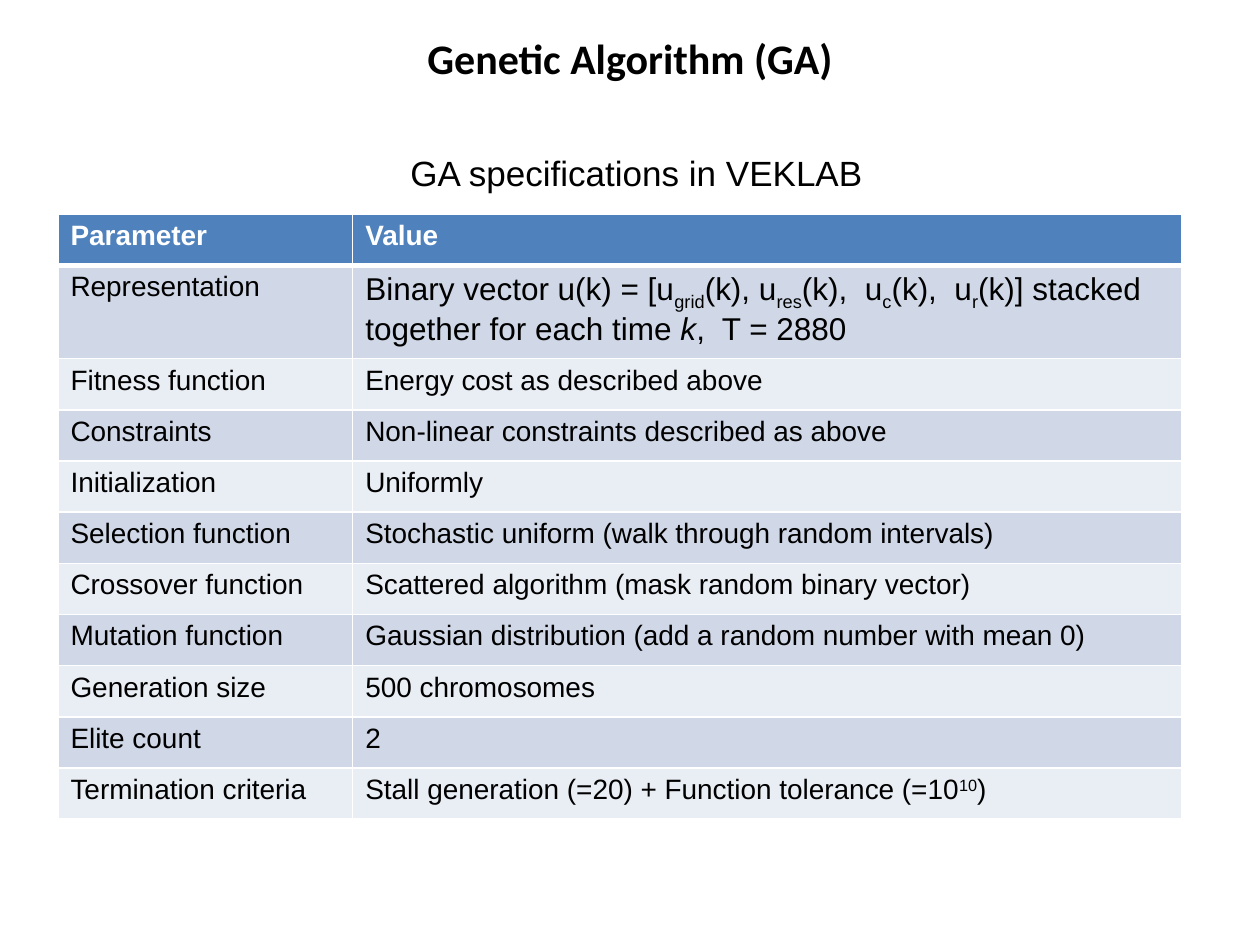
from dataclasses import dataclass

from lxml import etree
from pptx import Presentation
from pptx import util as u
from pptx.dml.color import RGBColor
from pptx.enum import text
from pptx.oxml.ns import qn


@dataclass(frozen=True)
class Theme:
    heading_font: str = "Calibri"
    body_font: str = "Arial"
    ink: str = "000000"
    paper: str = "FFFFFF"
    header: str = "4F81BD"
    bands: tuple = ("D0D8E8", "E9EDF4")
    title_size: int = 24
    caption_size: int = 20
    formula_size: int = 18
    cell_size: int = 16
    grid_line: int = 1
    header_line: int = 3


THEME = Theme()
SUB, SUPER, ITALIC = {"baseline": -25}, {"baseline": 30}, {"italic": True}

COLUMNS = (2.34, 6.58)
TABLE_LEFT, TABLE_TOP, TABLE_HEIGHT = 0.46, 1.7, 4.79
FORMULA_ROW, FORMULA_HEIGHT = 1, 0.73

FORMULA = [
    "Binary vector u(k) = [u", ("grid", SUB), "(k), u", ("res", SUB),
    "(k),  u", ("c", SUB), "(k),  u", ("r", SUB),
    "(k)] stacked together for each time ", ("k", ITALIC), ",  T = 2880",
]
TOLERANCE = ["Stall generation (=20) + Function tolerance (=10", ("10", SUPER), ")"]

ROWS = [
    ("Parameter", "Value"),
    ("Representation", FORMULA),
    ("Fitness function", "Energy cost as described above"),
    ("Constraints", "Non-linear constraints described as above"),
    ("Initialization", "Uniformly"),
    ("Selection function", "Stochastic uniform (walk through random intervals)"),
    ("Crossover function", "Scattered algorithm (mask random binary vector)"),
    ("Mutation function", "Gaussian distribution (add a random number with mean 0)"),
    ("Generation size", "500 chromosomes"),
    ("Elite count", "2"),
    ("Termination criteria", TOLERANCE),
]


def write(frame, content, *, size, font=THEME.body_font, color=THEME.ink,
          bold=False, align=text.PP_ALIGN.LEFT):
    """Fill a text frame with a string, or a list of strings and (string, style) pairs."""
    para = frame.paragraphs[0]
    para.alignment = align
    for part in [content] if isinstance(content, str) else content:
        words, style = (part, {}) if isinstance(part, str) else part
        span = para.add_run()
        span.text = words
        span.font.name = font
        span.font.size = u.Pt(size)
        span.font.bold = bold
        span.font.italic = style.get("italic", False)
        span.font.color.rgb = RGBColor.from_string(color)
        if "baseline" in style:
            span.font._element.set("baseline", str(style["baseline"] * 1000))


def add_title(page, content):
    box = page.shapes.title
    box.left, box.top = u.Inches(0.55), u.Inches(0.21)
    box.width, box.height = u.Inches(8.9), u.Inches(0.5)
    box.text_frame.vertical_anchor = text.MSO_ANCHOR.TOP
    write(box.text_frame, content, size=THEME.title_size, font=THEME.heading_font,
          bold=True, align=text.PP_ALIGN.CENTER)


def add_caption(page, content):
    box = page.shapes.add_textbox(u.Inches(3.16), u.Inches(1.15),
                                  u.Inches(3.83), u.Inches(0.44))
    box.text_frame.word_wrap = False
    write(box.text_frame, content, size=THEME.caption_size)


def set_borders(cell, **widths):
    """Draw the four sides in the paper colour; widths in points, by side L, R, T, B."""
    properties = cell._tc.get_or_add_tcPr()
    for side in "LRTB":
        width = widths.get(side, THEME.grid_line)
        line = etree.SubElement(properties, qn(f"a:ln{side}"), w=str(u.Pt(width)))
        fill = etree.SubElement(line, qn("a:solidFill"))
        etree.SubElement(fill, qn("a:srgbClr"), val=THEME.paper)


def format_cell(cell, row, content):
    is_header = row == 0
    if is_header:
        set_borders(cell, B=THEME.header_line)
    elif row == 1:
        set_borders(cell, T=THEME.header_line)
    else:
        set_borders(cell)
    fill = THEME.header if is_header else THEME.bands[(row - 1) % 2]
    cell.fill.solid()
    cell.fill.fore_color.rgb = RGBColor.from_string(fill)
    write(cell.text_frame, content, bold=is_header,
          color=THEME.paper if is_header else THEME.ink,
          size=THEME.formula_size if content is FORMULA else THEME.cell_size)


def add_parameter_table(page):
    table = page.shapes.add_table(
        len(ROWS), len(COLUMNS), u.Inches(TABLE_LEFT), u.Inches(TABLE_TOP),
        u.Inches(sum(COLUMNS)), u.Inches(TABLE_HEIGHT)).table
    table.horz_banding = False
    for column, width in zip(table.columns, COLUMNS):
        column.width = u.Inches(width)
    plain_height = (TABLE_HEIGHT - FORMULA_HEIGHT) / (len(ROWS) - 1)
    for row, contents in enumerate(ROWS):
        height = FORMULA_HEIGHT if row == FORMULA_ROW else plain_height
        table.rows[row].height = u.Inches(height)
        for column, content in enumerate(contents):
            format_cell(table.cell(row, column), row, content)


def main():
    deck = Presentation()
    deck.slide_width, deck.slide_height = u.Inches(10), u.Inches(7.5)
    page = deck.slides.add_slide(deck.slide_layouts.get_by_name("Title Only"))
    add_title(page, "Genetic Algorithm (GA)")
    add_caption(page, "GA specifications in VEKLAB")
    add_parameter_table(page)
    deck.save("out.pptx")


if __name__ == "__main__":
    main()
